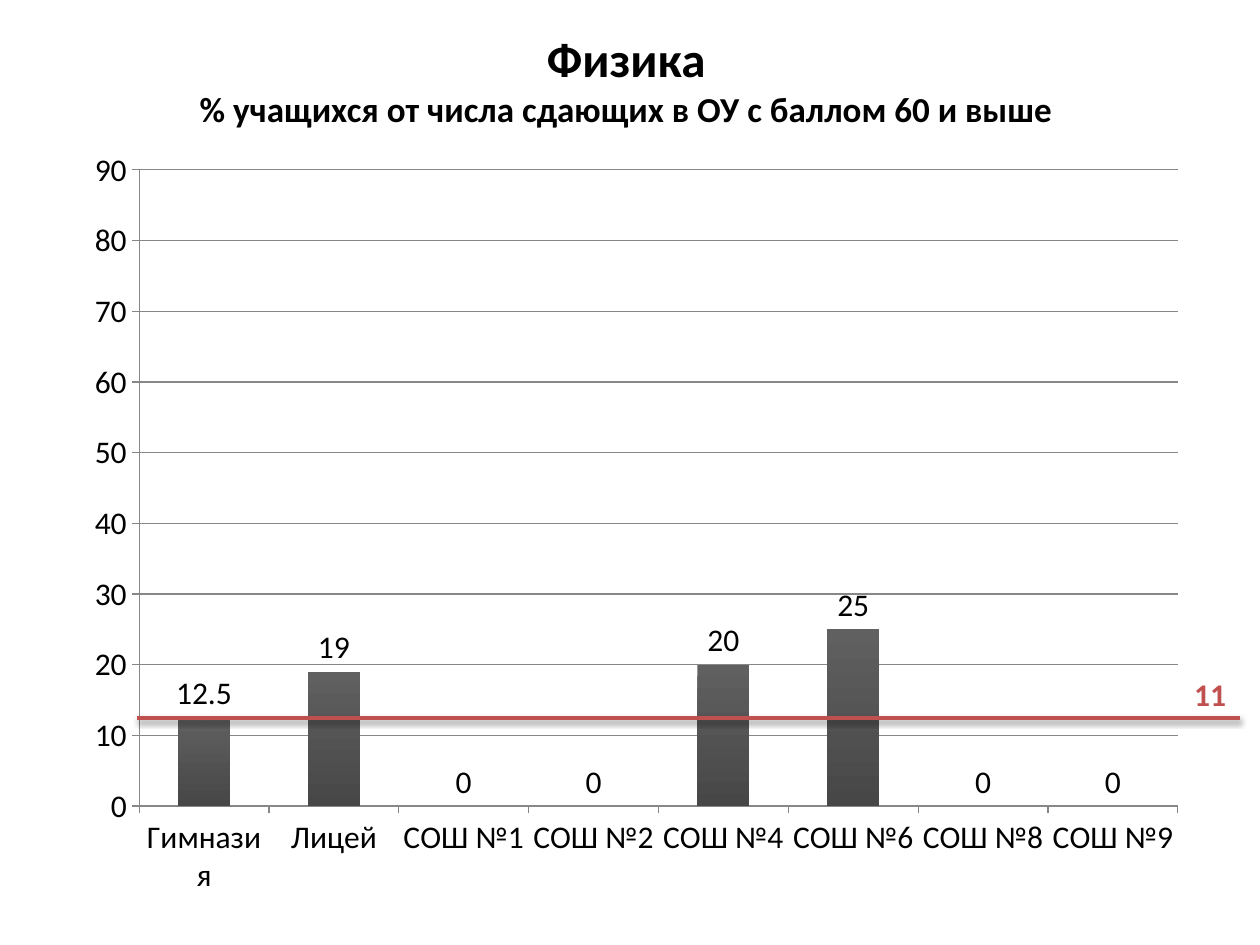
"""Build a slide with a column chart of physics exam results by school."""
from lxml.etree import SubElement
from pptx import Presentation
from pptx.chart.data import CategoryChartData
from pptx.dml.color import RGBColor
from pptx.enum.chart import XL_CHART_TYPE, XL_LABEL_POSITION, XL_TICK_MARK
from pptx.enum.shapes import MSO_CONNECTOR
from pptx.enum.text import MSO_ANCHOR, PP_ALIGN
from pptx.oxml import parse_xml
from pptx.oxml.ns import nsdecls, qn
from pptx.util import Inches, Pt

FONT = "Calibri"
COLORS = {"text": "000000", "mean": "C0504D", "grid": "878787",
          "top": "606060", "base": "474747"}
TITLE = [("Физика", 28), ("% учащихся от числа сдающих в ОУ с баллом 60 и выше", 20)]
SCORES = {"Гимназия": 12.5, "Лицей": 19, "СОШ №1": 0, "СОШ №2": 0,
          "СОШ №4": 20, "СОШ №6": 25, "СОШ №8": 0, "СОШ №9": 0}
MEAN = "11"
PLOT = {"x": 0.07, "y": 0.03, "w": 0.91, "h": 0.85}


def color(name):
    return RGBColor.from_string(COLORS[name])


def style(font, size, name="text", bold=False):
    font.name, font.size, font.bold = FONT, Pt(size), bold
    font.color.rgb = color(name)


def add_box(slide, *place):
    frame = slide.shapes.add_textbox(*map(Inches, place)).text_frame
    frame.word_wrap = True
    return frame


def add_title(slide):
    frame = add_box(slide, 0.47, 0, 9, 1.25)
    frame.vertical_anchor = MSO_ANCHOR.MIDDLE
    para = frame.paragraphs[0]
    para.alignment = PP_ALIGN.CENTER
    for i, (text, size) in enumerate(TITLE):
        if i:
            para.add_line_break()
        run = para.add_run()
        run.text = text
        style(run.font, size, bold=True)


def set_plot(chart):
    area = chart._chartSpace.chart.plotArea
    for old in area.findall(qn("c:layout")):
        area.remove(old)
    layout = parse_xml(f"<c:layout {nsdecls('c')}/>")
    area.insert(0, layout)
    manual = SubElement(layout, qn("c:manualLayout"))
    rules = {"layoutTarget": "inner", "xMode": "edge", "yMode": "edge", **PLOT}
    for tag, value in rules.items():
        SubElement(manual, qn(f"c:{tag}")).set("val", str(value))


def add_scores(slide):
    data = CategoryChartData()
    data.categories = list(SCORES)
    data.add_series("Series 1", list(SCORES.values()))
    place = map(Inches, (0.47, 1.17, 9.06, 5.94))
    chart = slide.shapes.add_chart(XL_CHART_TYPE.COLUMN_CLUSTERED, *place, data).chart
    chart.has_legend = chart.has_title = False
    style(chart.font, 18)
    set_plot(chart)

    axis = chart.value_axis
    axis.minimum_scale, axis.maximum_scale, axis.major_unit = 0, 90, 10
    axis.has_major_gridlines = True
    for line in (axis.major_gridlines.format.line, axis.format.line,
                 chart.category_axis.format.line):
        line.color.rgb = color("grid")
        line.width = Pt(0.75)
    for each in (axis, chart.category_axis):
        each.major_tick_mark = XL_TICK_MARK.OUTSIDE

    plot = chart.plots[0]
    plot.gap_width = 150
    plot.vary_by_categories = False
    plot.has_data_labels = True
    labels = plot.data_labels
    labels.show_value = True
    labels.position = XL_LABEL_POSITION.OUTSIDE_END
    style(labels.font, 18)
    fill = plot.series[0].format.fill
    fill.gradient()
    fill.gradient_angle = 270
    for stop, name in zip(fill.gradient_stops, ("top", "base")):
        stop.color.rgb = color(name)


def add_mean(slide):
    ends = map(Inches, (1.09, 5.7, 9.84, 5.7))
    line = slide.shapes.add_connector(MSO_CONNECTOR.STRAIGHT, *ends)
    line.line.color.rgb = color("mean")
    line.line.width = Pt(2)
    line._element.spPr.append(parse_xml(
        f'<a:effectLst {nsdecls("a")}>'
        '<a:outerShdw blurRad="40000" dist="20000" dir="5400000" rotWithShape="0">'
        '<a:srgbClr val="000000"><a:alpha val="38000"/></a:srgbClr>'
        '</a:outerShdw></a:effectLst>'))
    para = add_box(slide, 9.38, 5.31, 0.7, 0.4).paragraphs[0]
    para.text = MEAN
    style(para.font, 18, "mean", True)


def main():
    deck = Presentation()
    deck.slide_width, deck.slide_height = Inches(10), Inches(7.5)
    slide = deck.slides.add_slide(deck.slide_layouts[6])
    add_title(slide)
    add_scores(slide)
    add_mean(slide)
    deck.save("out.pptx")


if __name__ == "__main__":
    main()
